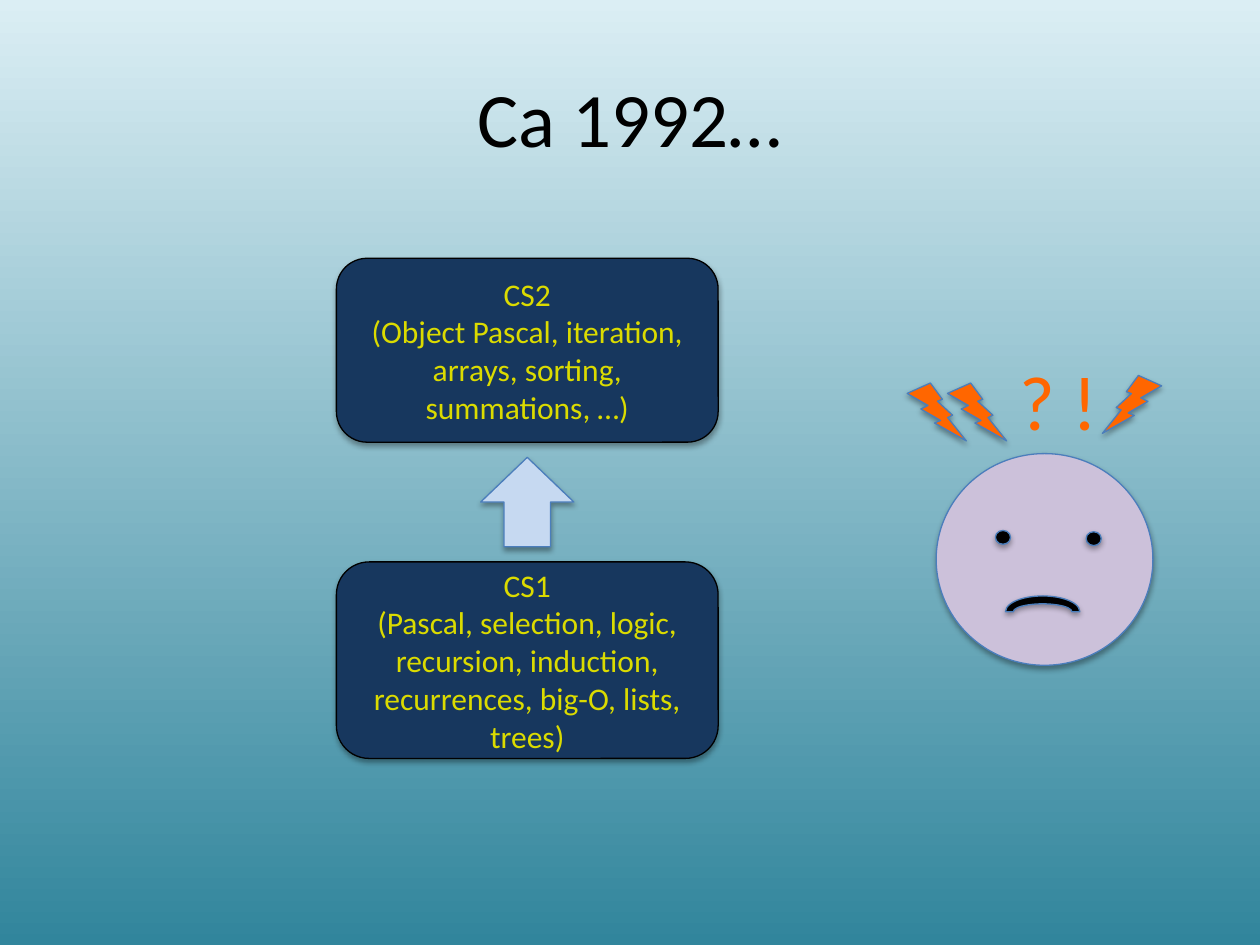
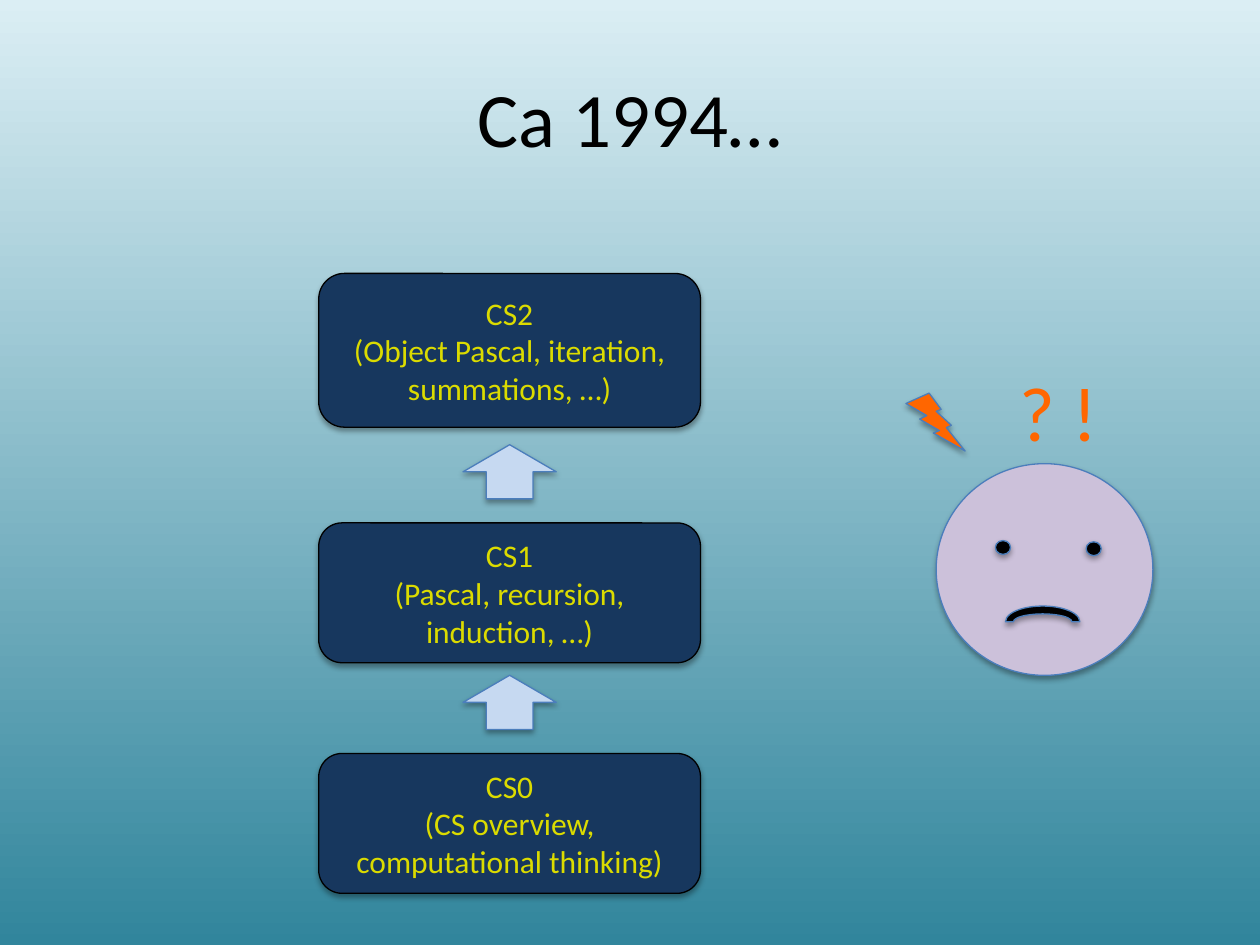
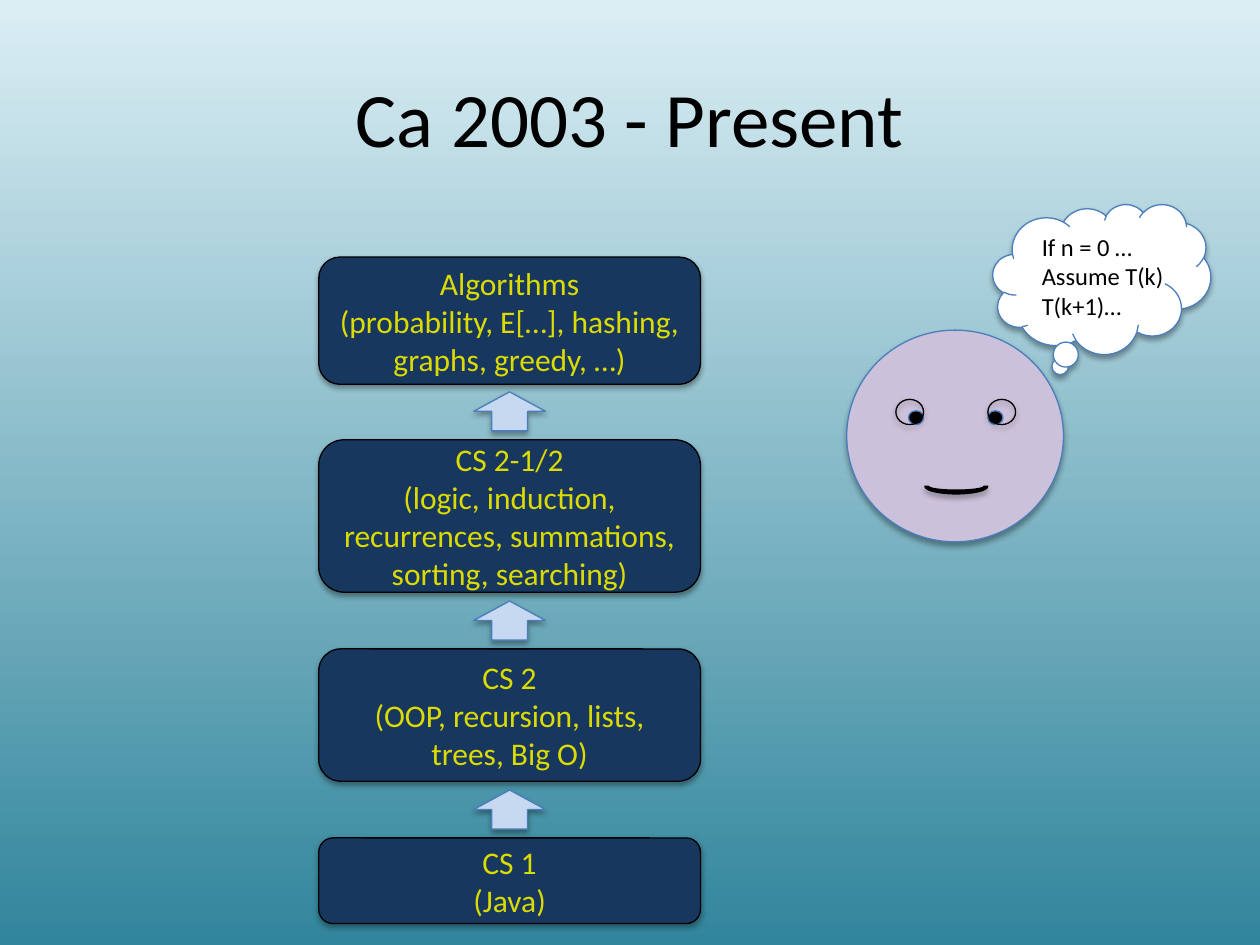
from pptx import Presentation
from pptx.dml.color import RGBColor
from pptx.enum import shapes, text
from pptx.util import Inches, Pt

NAVY, YELLOW, PALE, BLUE = "17375E", "DBDB00", "C6D9F1", "4B7EBC"
LILAC, ORANGE, BLACK, WHITE = "CCC1DA", "FF6600", "000000", "FFFFFF"
SKY, TEAL = "DBEEF4", "31859C"
MS = shapes.MSO_SHAPE
LEFT, CENTER = text.PP_ALIGN.LEFT, text.PP_ALIGN.CENTER
rgb = RGBColor.from_string


def draw(parent, kind, box, fill, line=BLUE, flip=None):
    sp = parent.shapes.add_shape(kind, *map(Inches, box))
    if fill:
        sp.fill.solid()
        sp.fill.fore_color.rgb = rgb(fill)
    else:
        sp.fill.background()
    sp.line.color.rgb = rgb(line)
    sp.line.width = Pt(0.75)
    if flip:
        sp._element.spPr.xfrm.set(flip, "1")
    return sp


def write(sp, lines, size, color, align=CENTER):
    tf = sp.text_frame
    tf.word_wrap = True
    tf.text = "\n".join(lines)
    for p in tf.paragraphs:
        p.alignment = align
        font = p.runs[0].font
        for name, value in {"name": "Calibri", "size": Pt(size)}.items():
            setattr(font, name, value)
        font.color.rgb = rgb(color)
    return tf


prs = Presentation()
prs.slide_width, prs.slide_height = Inches(10), Inches(7.5)

bg = prs.slide_master.background.fill
bg.gradient()
bg.gradient_angle = 270
for stop, color, pos in zip(bg.gradient_stops, (SKY, TEAL), (0, 1)):
    stop.color.rgb = rgb(color)
    stop.position = pos

BOX_W = 3.03
decks = [
    {
        "title": "Ca 1992…", "left": 2.67, "arrow": (0.74, 0.71), "arrow_tops": [3.63],
        "courses": [
            (2.05, 1.46, "CS2", "(Object Pascal, iteration, arrays, sorting, summations, …)"),
            (4.46, 1.56, "CS1", "(Pascal, selection, logic, recursion, induction, recurrences, big-O, lists, trees)"),
        ],
        "face": (7.43, 3.6),
        "bolts": [(0.09, -0.56, None), (-0.23, -0.56, None), (1.32, -0.62, "flipH")],
    },
    {
        "title": "Ca 1994…", "left": 2.53, "arrow": (0.74, 0.43), "arrow_tops": [3.53, 5.36],
        "courses": [
            (2.17, 1.22, "CS2", "(Object Pascal, iteration, summations, …)"),
            (4.15, 1.11, "CS1", "(Pascal, recursion, induction, …)"),
            (5.98, 1.11, "CS0", "(CS overview, computational thinking)"),
        ],
        "face": (7.43, 3.68),
        "bolts": [(-0.24, -0.56, None)],
    },
    {
        "title": "Ca 2003 - Present", "left": 2.53, "arrow": (0.57, 0.31), "arrow_tops": [3.11, 4.77, 6.27],
        "courses": [
            (2.04, 1.01, "Algorithms", "(probability, E[…], hashing, graphs, greedy, …)"),
            (3.49, 1.21, "CS 2-1/2", "(logic, induction, recurrences, summations, sorting, searching)"),
            (5.15, 1.05, "CS 2", "(OOP, recursion, lists, trees, Big O)"),
            (6.65, 0.68, "CS 1", "(Java)"),
        ],
        "face": (6.72, 2.62),
        "bolts": [],
    },
]

for d in decks:
    s = prs.slides.add_slide(prs.slide_layouts[5])
    title = s.shapes.title
    for name, value in zip(("left", "top", "width", "height"), (0.5, 0.3, 9, 1.25)):
        setattr(title, name, Inches(value))
    tf = write(title, [d["title"]], 44, BLACK)
    tf.vertical_anchor = text.MSO_ANCHOR.MIDDLE

    stack = s.shapes.add_group_shape()
    for top, height, name, topics in d["courses"]:
        sp = draw(stack, MS.ROUNDED_RECTANGLE, (d["left"], top, BOX_W, height), NAVY, BLACK)
        write(sp, [name, topics], 18, YELLOW)
    w, h = d["arrow"]
    for top in d["arrow_tops"]:
        draw(stack, MS.UP_ARROW, (d["left"] + (BOX_W - w) / 2, top, w, h), PALE)

    x, y = d["face"]
    face = s.shapes.add_group_shape()
    draw(face, MS.OVAL, (x, y, 1.72, 1.68), LILAC)
    if d["bolts"]:
        for dx, dy in ((0.47, 0.61), (1.19, 0.62)):
            draw(face, MS.OVAL, (x + dx, y + dy, 0.12, 0.11), BLACK)
        draw(face, MS.BLOCK_ARC, (x + 0.55, y + 1.13, 0.59, 0.25), BLACK)
        for dx, dy, flip in d["bolts"]:
            draw(face, MS.LIGHTNING_BOLT, (x + dx, y + dy, 0.47, 0.46), ORANGE, flip=flip)
        words, size, color, box = ["? !"], 44, ORANGE, (x + 0.56, y - 0.84, 1, 0.84)
    else:
        for pupil, eye in ((0.49, 0.39), (1.12, 1.12)):
            sp = draw(face, MS.OVAL, (x + pupil, y + 0.64, 0.12, 0.11), BLACK)
            sp.shadow.inherit = False
            draw(face, MS.OVAL, (x + eye, y + 0.55, 0.22, 0.2), None, BLACK)
        draw(face, MS.BLOCK_ARC, (x + 0.62, y + 1.18, 0.5, 0.12), BLACK, BLACK, "flipV")
        cloud = draw(face, MS.CLOUD_CALLOUT, (7.88, 1.62, 1.73, 1.19), WHITE)
        cloud.adjustments[0], cloud.adjustments[1] = -0.2, 0.61
        words, size, color = ["If n = 0 …", "Assume T(k)", "T(k+1)…"], 14, BLACK
        box = (8.17, 1.79, 1.33, 0.81)
    tf = write(face.shapes.add_textbox(*map(Inches, box)), words, size, color, LEFT)
    tf.auto_size = text.MSO_AUTO_SIZE.SHAPE_TO_FIT_TEXT

prs.save("out.pptx")
